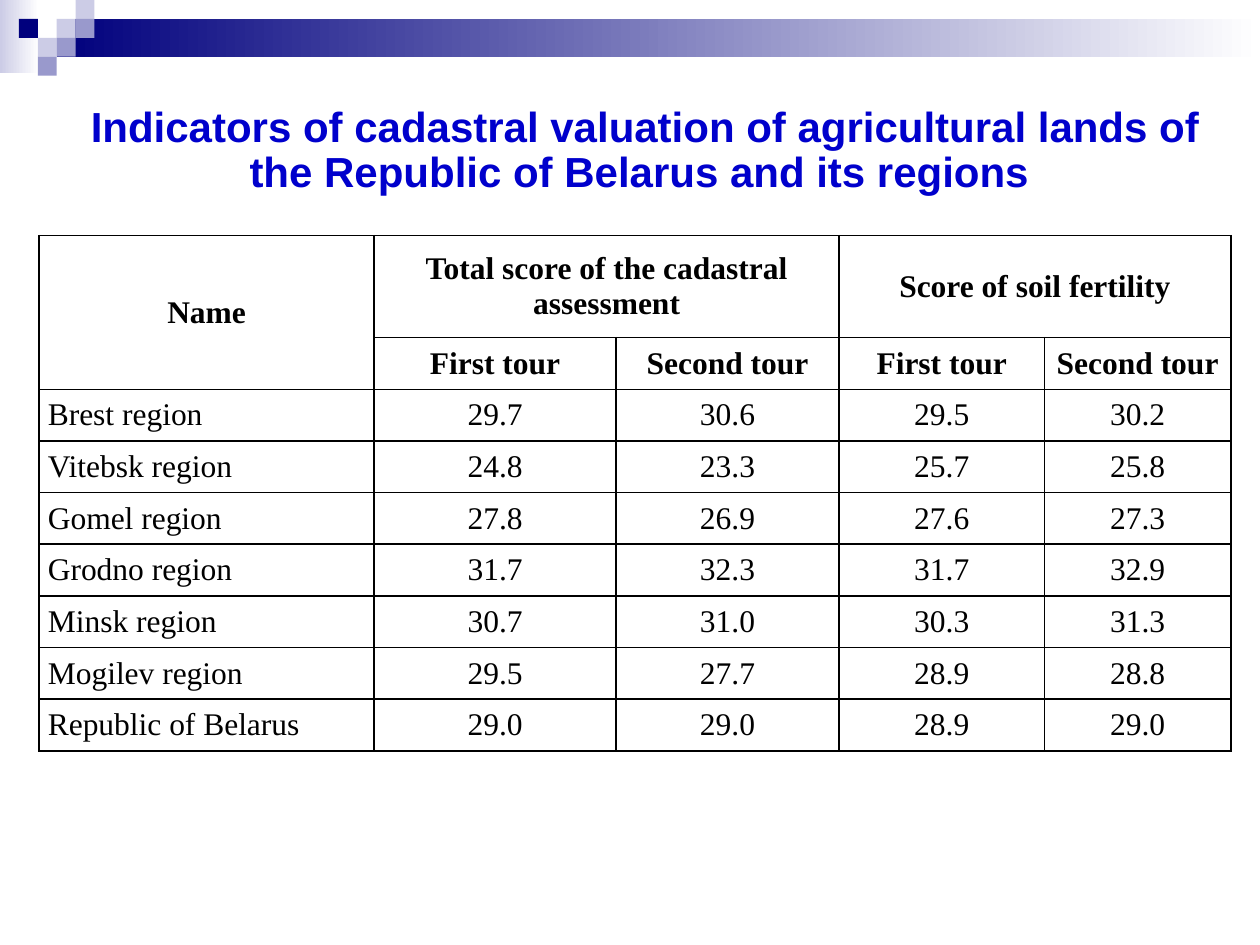
from lxml.etree import SubElement
from pptx import Presentation
from pptx.dml.color import RGBColor
from pptx.enum.shapes import MSO_SHAPE
from pptx.enum.text import MSO_ANCHOR, PP_ALIGN
from pptx.oxml.ns import qn
from pptx.util import Inches, Pt

WHITE = RGBColor(0xFF, 0xFF, 0xFF)
BLACK = RGBColor(0x00, 0x00, 0x00)
NAVY = RGBColor(0x00, 0x00, 0x7D)
LAVENDER = RGBColor(0xCC, 0xCC, 0xE6)
PERIWINKLE = RGBColor(0x99, 0x99, 0xCC)
TITLE_BLUE = RGBColor(0x00, 0x00, 0xCC)

TILE = 0.15
# Column and row on the tile grid, then colour
MOSAIC = [
    (3, 1, LAVENDER), (4, 0, LAVENDER), (4, 1, PERIWINKLE), (2, 2, LAVENDER),
    (1, 1, NAVY), (3, 2, PERIWINKLE), (2, 3, PERIWINKLE),
]

COLUMN_WIDTHS = [2.66, 1.92, 1.77, 1.63, 1.48]
HEADER_HEIGHT, ROW_HEIGHT = 0.81, 0.41
HEADER_ROWS = [
    ("Name", "Total score of the cadastral assessment", "", "Score of soil fertility", ""),
    ("", "First tour", "Second tour", "First tour", "Second tour"),
]
SCORES = [
    ("Brest region", "29.7", "30.6", "29.5", "30.2"),
    ("Vitebsk region", "24.8", "23.3", "25.7", "25.8"),
    ("Gomel region", "27.8", "26.9", "27.6", "27.3"),
    ("Grodno region", "31.7", "32.3", "31.7", "32.9"),
    ("Minsk region", "30.7", "31.0", "30.3", "31.3"),
    ("Mogilev region", "29.5", "27.7", "28.9", "28.8"),
    ("Republic of Belarus", "29.0", "29.0", "28.9", "29.0"),
]
# First and last cell of each merged heading
HEADING_SPANS = [((0, 0), (1, 0)), ((0, 1), (0, 2)), ((0, 3), (0, 4))]


def write_text(frame, text, *, font, size, color, bold=False,
               align=PP_ALIGN.CENTER, line_spacing=None):
    frame.word_wrap = True
    paragraph = frame.paragraphs[0]
    paragraph.alignment = align
    paragraph.line_spacing = line_spacing
    run = paragraph.add_run()
    run.text = text
    run.font.name = font
    run.font.size = Pt(size)
    run.font.bold = bold
    run.font.color.rgb = color


def add_block(slide, left, top, width, height, color, fade=False):
    """Add a borderless rectangle, fading to white on the right if asked."""
    block = slide.shapes.add_shape(
        MSO_SHAPE.RECTANGLE, *map(Inches, (left, top, width, height)))
    block.shadow.inherit = False
    block.line.fill.background()
    if fade:
        block.fill.gradient()
        block.fill.gradient_angle = 0
        for stop, shade, position in zip(block.fill.gradient_stops, (color, WHITE), (0, 1)):
            stop.color.rgb = shade
            stop.position = position
    else:
        block.fill.solid()
        block.fill.fore_color.rgb = color


def add_banner(slide):
    add_block(slide, 0, 0, 0.31, 0.58, LAVENDER, fade=True)
    add_block(slide, 3 * TILE, TILE, 10 - 3 * TILE, 2 * TILE, NAVY, fade=True)
    for column, row, color in MOSAIC:
        add_block(slide, column * TILE, row * TILE, TILE, TILE, color)


def add_title(slide, text):
    title = slide.shapes.add_textbox(*map(Inches, (0.59, 0.68, 9.06, 1.04)))
    title.text_frame.vertical_anchor = MSO_ANCHOR.MIDDLE
    write_text(title.text_frame, text, font="Arial", size=24,
               color=TITLE_BLUE, bold=True, line_spacing=0.9)


def add_borders(cell, color, width):
    properties = cell._tc.get_or_add_tcPr()
    for side in ("a:lnL", "a:lnR", "a:lnT", "a:lnB"):
        line = SubElement(properties, qn(side), w=str(Pt(width)))
        fill = SubElement(line, qn("a:solidFill"))
        SubElement(fill, qn("a:srgbClr"), val=str(color))


def format_cell(cell):
    cell.vertical_anchor = MSO_ANCHOR.MIDDLE
    cell.margin_left = cell.margin_right = Inches(0.07)
    cell.margin_top = cell.margin_bottom = 0
    add_borders(cell, BLACK, 1)
    cell.fill.background()


def add_score_table(slide):
    rows = HEADER_ROWS + SCORES
    heights = [HEADER_HEIGHT] + [ROW_HEIGHT] * (len(rows) - 1)
    table = slide.shapes.add_table(
        len(rows), len(COLUMN_WIDTHS), Inches(0.31), Inches(1.87),
        Inches(sum(COLUMN_WIDTHS)), Inches(sum(heights))).table
    table.first_row = table.horz_banding = False
    for column, width in zip(table.columns, COLUMN_WIDTHS):
        column.width = Inches(width)
    for row, height in zip(table.rows, heights):
        row.height = Inches(height)

    for r, values in enumerate(rows):
        is_header = r < len(HEADER_ROWS)
        for c, value in enumerate(values):
            cell = table.cell(r, c)
            format_cell(cell)
            if value:
                is_name = c == 0 and not is_header
                write_text(cell.text_frame, value, font="Times New Roman",
                           size=18, color=BLACK, bold=is_header,
                           align=PP_ALIGN.LEFT if is_name else PP_ALIGN.CENTER)
    for first, last in HEADING_SPANS:
        table.cell(*first).merge(table.cell(*last))


def main():
    presentation = Presentation()
    presentation.slide_width = Inches(10)
    presentation.slide_height = Inches(7.5)
    slide = presentation.slides.add_slide(presentation.slide_layouts[6])
    add_banner(slide)
    add_title(slide, "Indicators of cadastral valuation of agricultural lands "
                     "of the Republic of Belarus and its regions ")
    add_score_table(slide)
    presentation.save("out.pptx")


if __name__ == "__main__":
    main()
